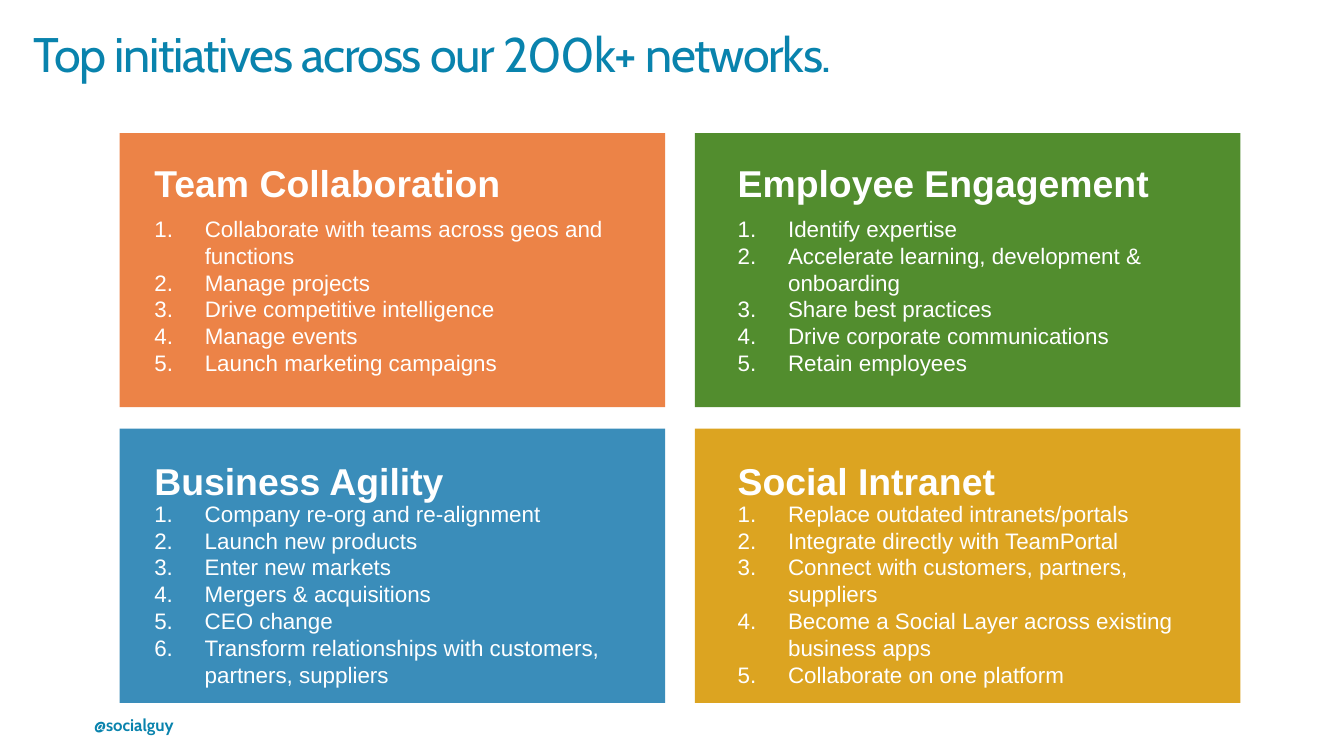
from lxml import etree
from pptx import Presentation
from pptx.dml.color import RGBColor
from pptx.enum.shapes import MSO_SHAPE
from pptx.enum.text import MSO_AUTO_SIZE
from pptx.oxml.ns import qn
from pptx.util import Inches, Pt

TEAL = "0983AD"
WHITE = "FFFFFF"
COLUMNS = [(0.89, 1.05), (5.17, 5.39)]
ROWS = [(0.99, 1.14, 1.55), (3.19, 3.36, 3.67)]
CARDS = [
    ("Team Collaboration", "E96E27", 85, 3.29, (3.79, 1.51), [
        "Collaborate with teams across geos and functions",
        "Manage projects",
        "Drive competitive intelligence",
        "Manage events",
        "Launch marketing campaigns",
    ]),
    ("Employee Engagement", "528D2E", 100, 3.7, (3.71, 1.31), [
        "Identify expertise",
        "Accelerate learning, development & onboarding",
        "Share best practices",
        "Drive corporate communications",
        "Retain employees",
    ]),
    ("Business Agility", "3A8DBA", 100, 3.7, (3.83, 1.51), [
        "Company re-org and re-alignment",
        "Launch new products",
        "Enter new markets",
        "Mergers & acquisitions",
        "CEO change",
        "Transform relationships with customers, partners, suppliers",
    ]),
    ("Social Intranet", "DCA421", 100, 3.7, (3.79, 1.51), [
        "Replace outdated intranets/portals",
        "Integrate directly with TeamPortal",
        "Connect with customers, partners, suppliers",
        "Become a Social Layer across existing business apps",
        "Collaborate on one platform",
    ]),
]


def rgb(value):
    return RGBColor.from_string(value)


class Deck:
    heading_font = "Cabin"
    body_font = "Arial"
    list_indent = Inches(3 / 8)

    def __init__(self, slide):
        self.slide = slide

    def panel(self, x, y, w, h, color, opacity):
        sp = self.slide.shapes.add_shape(
            MSO_SHAPE.RECTANGLE, Inches(x), Inches(y), Inches(w), Inches(h))
        sp.shadow.inherit = False
        sp.fill.solid()
        sp.fill.fore_color.rgb = rgb(color)
        sp.line.fill.background()
        if opacity < 100:
            clr = sp._element.spPr.find(qn("a:solidFill"))[0]
            etree.SubElement(clr, qn("a:alpha")).set("val", str(opacity * 1000))

    def text(self, x, y, w, h, lines, size, font, color, bold=False,
             insets=(0.1, 0.05), wrap=True, grow=True, numbered=False):
        tf = self.slide.shapes.add_textbox(
            Inches(x), Inches(y), Inches(w), Inches(h)).text_frame
        tf.word_wrap = wrap
        tf.auto_size = (MSO_AUTO_SIZE.SHAPE_TO_FIT_TEXT if grow
                        else MSO_AUTO_SIZE.NONE)
        tf.margin_left = tf.margin_right = Inches(insets[0])
        tf.margin_top = tf.margin_bottom = Inches(insets[1])
        tf.text = "\n".join(lines)
        for p in tf.paragraphs:
            if numbered:
                self.number(p)
            for r in p.runs:
                r.font.size = Pt(size)
                r.font.name = font
                r.font.bold = bold
                r.font.color.rgb = rgb(color)
        return tf

    def number(self, p):
        pPr = p._p.get_or_add_pPr()
        pPr.set("marL", str(self.list_indent))
        pPr.set("indent", str(-self.list_indent))
        etree.SubElement(pPr, qn("a:buFont")).set("typeface", "+mj-lt")
        etree.SubElement(pPr, qn("a:buAutoNum")).set("type", "arabicPeriod")

    def title(self, text):
        tf = self.text(0.25, 0.23, 9.5, 0.47, [text], 26, self.heading_font,
                       TEAL, insets=(0, 0), grow=False)
        p = tf.paragraphs[0]
        p.line_spacing = 0.9
        p.runs[0]._r.get_or_add_rPr().set("spc", "-75")

    def handle(self, text):
        self.text(0.63, 5.28, 0.98, 0.23, [text], 9, self.heading_font, TEAL,
                  bold=True, insets=(0.07, 0.04), wrap=False)

    def heading(self, x, y, w, text):
        self.text(x, y, w, 0.44, [text], 20, self.body_font, WHITE, bold=True)

    def numbered_list(self, x, y, w, h, items):
        self.text(x, y, w, h, items, 12, self.body_font, WHITE, numbered=True)


def main():
    prs = Presentation()
    prs.slide_width = Inches(10)
    prs.slide_height = Inches(10 * 9 / 16)
    deck = Deck(prs.slides.add_slide(prs.slide_layouts[6]))
    deck.handle("@socialguy")
    deck.title("Top initiatives across our 200k+ networks.")
    for i, (name, color, opacity, name_width, list_size, items) in enumerate(CARDS):
        panel_x, text_x = COLUMNS[i % 2]
        panel_y, heading_y, list_y = ROWS[i // 2]
        deck.panel(panel_x, panel_y, 4.06, 2.04, color, opacity)
        deck.heading(text_x, heading_y, name_width, name)
        deck.numbered_list(text_x, list_y, *list_size, items)
    prs.save("out.pptx")


if __name__ == "__main__":
    main()
